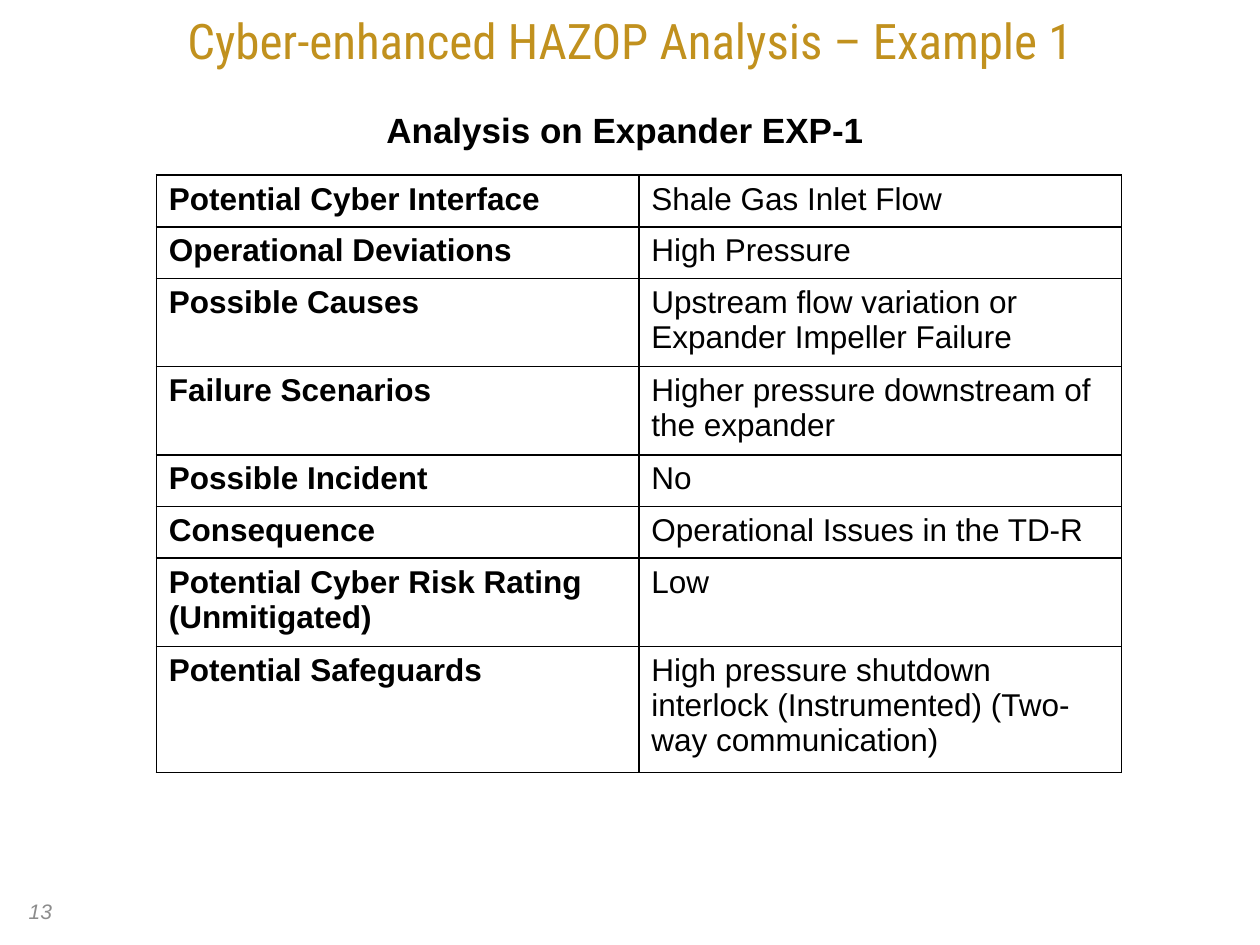
from dataclasses import dataclass
from lxml import etree
from pptx import Presentation, util as u
from pptx.dml.color import RGBColor as Rgb
from pptx.enum import text as t
from pptx.oxml.ns import qn


@dataclass
class Theme:
    body: str = "Arial"
    head: str = "Roboto Condensed"
    gold: str = "C1911E"
    grey: str = "8C8C8C"
    ink: str = "000000"
    title: int = 28
    sub: int = 20
    cell: int = 18
    page: int = 12


th = Theme()
deck = Presentation()
deck.slide_width, deck.slide_height = u.Inches(10), u.Inches(7.5)
slide = deck.slides.add_slide(deck.slide_layouts[6])


def write(frame, words, size, color, face=th.body, bold=False, slant=False):
    frame.text = words
    font = frame.paragraphs[0].runs[0].font
    font.name, font.size, font.bold, font.italic = face, u.Pt(size), bold, slant
    font.color.rgb = Rgb.from_string(color)


def label(box, words, size, color, align=t.PP_ALIGN.CENTER, **style):
    frame = slide.shapes.add_textbox(*map(u.Inches, box)).text_frame
    frame.word_wrap = True
    write(frame, words, size, color, **style)
    frame.paragraphs[0].alignment = align
    return frame


# Page number, title and table heading
page = label((0.13, 7.03, 2.33, 0.4), "13", th.page, th.grey,
             align=t.PP_ALIGN.LEFT, slant=True)
page.vertical_anchor = t.MSO_ANCHOR.MIDDLE
title = label((0, 0.08, 10, 0.59), "Cyber-enhanced HAZOP Analysis – Example 1",
              th.title, th.gold, face=th.head)
title.margin_left = title.margin_right = title.margin_top = title.margin_bottom = 0
label((2.83, 0.81, 4.34, 0.44), "Analysis on Expander EXP-1 ",
      th.sub, th.ink, bold=True)

# Findings: name, value, lines of text in the row
rows = [
    ("Potential Cyber Interface", "Shale Gas Inlet Flow", 1),
    ("Operational Deviations", "High Pressure", 1),
    ("Possible Causes", "Upstream flow variation or Expander Impeller Failure", 2),
    ("Failure Scenarios", "Higher pressure downstream of the expander", 2),
    ("Possible Incident", "No", 1),
    ("Consequence", "Operational Issues in the TD-R", 1),
    ("Potential Cyber Risk Rating (Unmitigated)", "Low", 2),
    ("Potential Safeguards", "High pressure shutdown interlock (Instrumented) "
     "(Two-way communication)", 3),
]
first, extra = 0.41, 0.29  # height of one line, and of each further line
high = sum(first + extra * (row[2] - 1) for row in rows)
grid = slide.shapes.add_table(len(rows), 2, u.Inches(1.24), u.Inches(1.39),
                              u.Inches(7.66), u.Inches(high)).table
grid.first_row = grid.horz_banding = False

for r, (*words, lines) in enumerate(rows):
    grid.rows[r].height = u.Inches(first + extra * (lines - 1))
    for c, word in enumerate(words):
        cell = grid.cell(r, c)
        write(cell.text_frame, word, th.cell, th.ink, bold=c == 0)
        # Thin border on all four sides, then no fill
        props = cell._tc.get_or_add_tcPr()
        for side in ("a:lnL", "a:lnR", "a:lnT", "a:lnB"):
            line = etree.SubElement(props, qn(side), w=str(u.Pt(1)))
            fill = etree.SubElement(line, qn("a:solidFill"))
            etree.SubElement(fill, qn("a:srgbClr"), val=th.ink)
        cell.fill.background()

deck.save("out.pptx")
